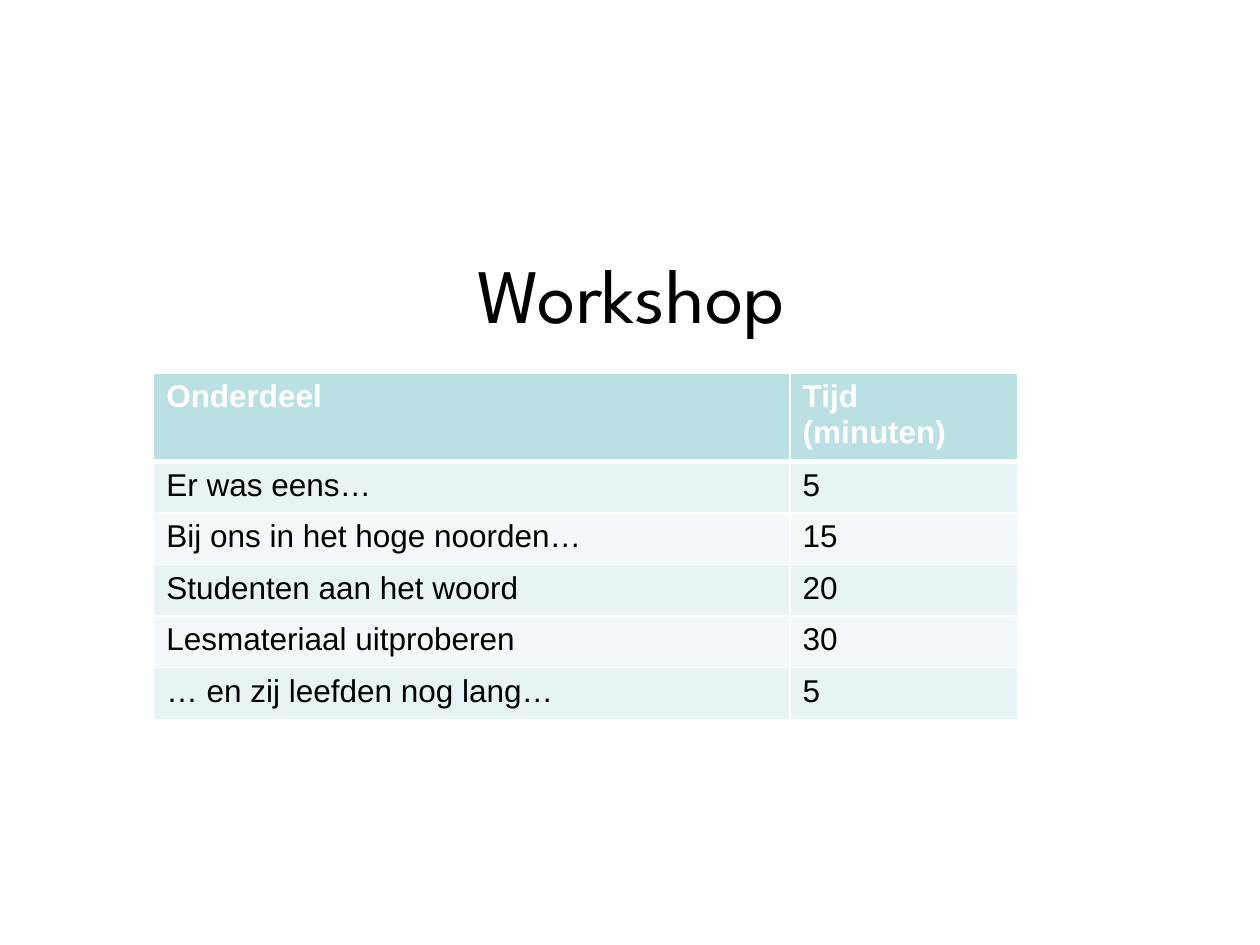
import dataclasses

import lxml.etree
import pptx
import pptx.dml.color
import pptx.enum.text
import pptx.oxml.ns
import pptx.util

Inches = pptx.util.Inches


@dataclasses.dataclass(frozen=True)
class Theme:
    title_font: str = "League Spartan"
    body_font: str = "Arial"
    title_size: int = 44
    body_size: int = 18
    dark: str = "000000"
    light: str = "FFFFFF"
    header_fill: str = "BBE0E3"
    band_fills: tuple = ("E7F3F4", "F3F9FA")


theme = Theme()


def write_text(frame, text, *, font=theme.body_font, size=theme.body_size,
               color=theme.dark, bold=False, align=pptx.enum.text.PP_ALIGN.LEFT):
    para = frame.paragraphs[0]
    para.alignment = align
    span = para.add_run()
    span.text = text
    span.font.name = font
    span.font.size = pptx.util.Pt(size)
    span.font.bold = bold
    span.font.color.rgb = pptx.dml.color.RGBColor.from_string(color)


def style_cell(cell, fill, border_widths):
    """Give the cell a solid fill and light borders; widths are points by side."""
    properties = cell._tc.get_or_add_tcPr()
    qn = pptx.oxml.ns.qn
    for side, width in border_widths.items():
        line = lxml.etree.SubElement(properties, qn(f"a:ln{side}"), w=str(pptx.util.Pt(width)))
        paint = lxml.etree.SubElement(line, qn("a:solidFill"))
        lxml.etree.SubElement(paint, qn("a:srgbClr"), val=theme.light)
    cell.fill.solid()
    cell.fill.fore_color.rgb = pptx.dml.color.RGBColor.from_string(fill)


deck = pptx.Presentation()
deck.slide_width, deck.slide_height = Inches(10), Inches(7.5)
page = deck.slides.add_slide(deck.slide_layouts[6])

# Title
title = page.shapes.add_textbox(Inches(0.51), Inches(1.7), Inches(9), Inches(1.25))
title.text_frame.word_wrap = True
title.text_frame.vertical_anchor = pptx.enum.text.MSO_ANCHOR.MIDDLE
write_text(title.text_frame, "Workshop", font=theme.title_font, size=theme.title_size,
           align=pptx.enum.text.PP_ALIGN.CENTER)

# Programme table
programme = [
    ("Onderdeel", "Tijd (minuten)"),
    ("Er was eens…", "5"),
    ("Bij ons in het hoge noorden…", "15"),
    ("Studenten aan het woord", "20"),
    ("Lesmateriaal uitproberen", "30"),
    ("… en zij leefden nog lang…", "5"),
]
table_height = Inches(2.73)
holder = page.shapes.add_table(len(programme), 2, Inches(1.22), Inches(2.96),
                               Inches(6.86), table_height)
table = holder.table
for column, width in zip(table.columns, (5.05, 1.81)):
    column.width = Inches(width)

for row_number, entries in enumerate(programme):
    table.rows[row_number].height = Inches(0.41)
    is_header = row_number == 0
    fill = theme.header_fill if is_header else theme.band_fills[(row_number - 1) % 2]
    borders = {"L": 1, "R": 1, "T": 3 if row_number == 1 else 1, "B": 3 if is_header else 1}
    for column_number, entry in enumerate(entries):
        cell = table.cell(row_number, column_number)
        style_cell(cell, fill, borders)
        write_text(cell.text_frame, entry, bold=is_header,
                   color=theme.light if is_header else theme.dark)
holder.height = table_height  # the header wraps to two lines

deck.save("out.pptx")
